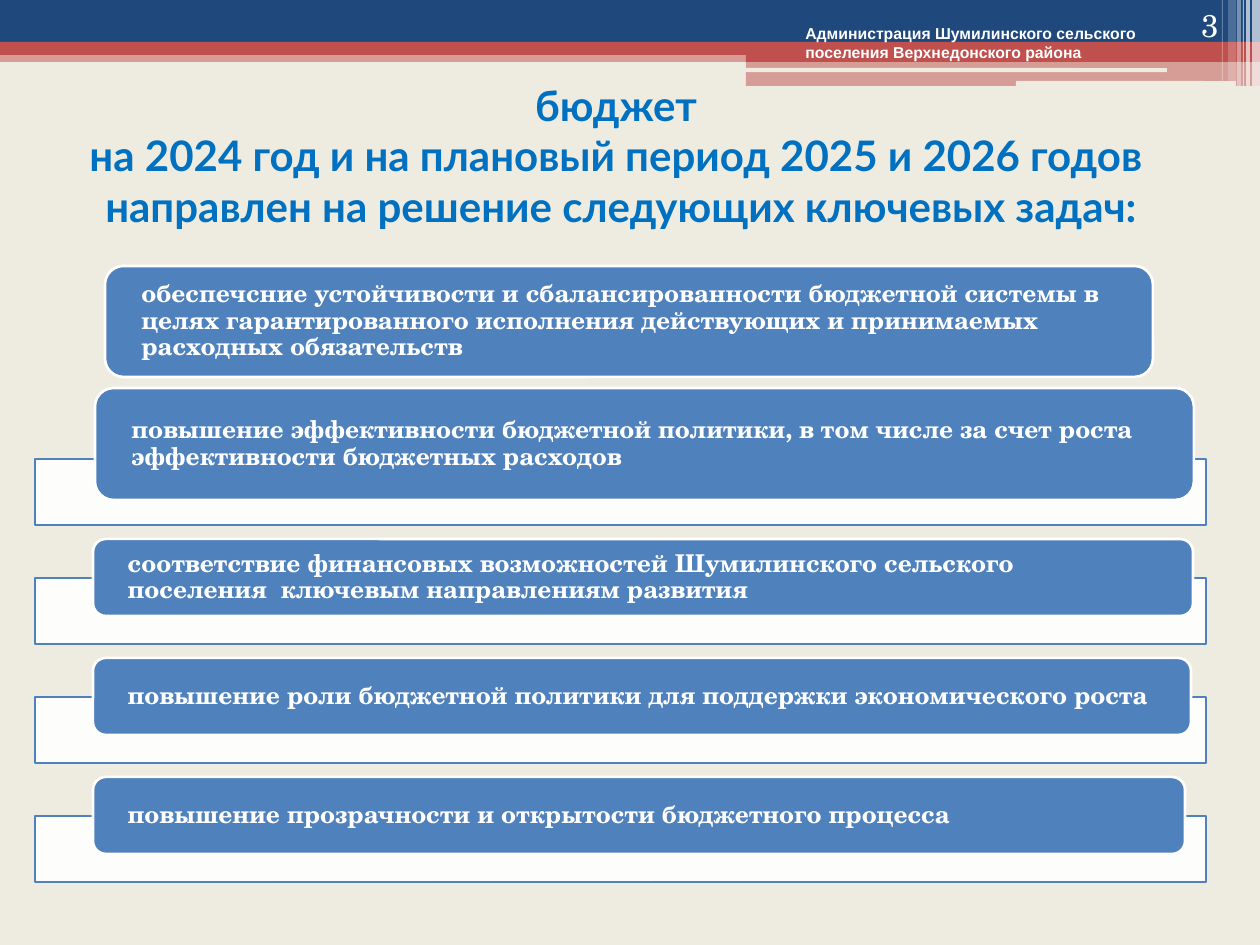
from lxml.etree import SubElement
from pptx import Presentation
from pptx.dml.color import RGBColor
from pptx.enum.shapes import MSO_SHAPE
from pptx.enum.text import MSO_ANCHOR, PP_ALIGN
from pptx.oxml.ns import qn
from pptx.util import Emu, Pt

CREAM = RGBColor(0xEE, 0xEC, 0xE1)
NAVY = RGBColor(0x1F, 0x49, 0x7D)
RED = RGBColor(0xC0, 0x50, 0x4D)
BLUE = RGBColor(0x4F, 0x81, 0xBD)
TITLE_BLUE = RGBColor(0x00, 0x70, 0xC0)
WHITE = RGBColor(0xFF, 0xFF, 0xFF)
SERIF = "TeX Gyre Schola"

ORGANIZATION = "Администрация Шумилинского сельского поселения Верхнедонского района"
PAGE_NUMBER = "3"
TITLE_LINES = [
    "бюджет ",
    "на 2024 год и на плановый период 2025 и 2026 годов ",
    "направлен на решение следующих ключевых задач:",
]

# Task text and card box: left, top, width, height
TASKS = [
    ("обеспечсние устойчивости и сбалансированности бюджетной системы в целях "
     "гарантированного исполнения действующих и принимаемых расходных обязательств",
     (105, 266, 1048, 111)),
    ("повышение эффективности бюджетной политики, в том числе за счет роста "
     "эффективности бюджетных расходов", (95, 388, 1099, 112)),
    ("cоответствие финансовых возможностей Шумилинского сельского поселения  "
     "ключевым направлениям развития", (93, 539, 1100, 77)),
    ("повышение роли бюджетной политики для поддержки экономического роста",
     (93, 658, 1098, 77)),
    ("повышение прозрачности и открытости бюджетного процесса",
     (93, 777, 1092, 77)),
]
PANEL_LEFT, PANEL_TOP, PANEL_WIDTH, PANEL_HEIGHT = 35, 459, 1171, 66
PANEL_PITCH = 119

# Header bands: box, colour, opacity in percent
BANDS = [
    ((0, 50, 1260, 12), RED, 50),
    ((0, 0, 1260, 43), NAVY, 100),
    ((0, 42, 1260, 13), RED, 100),
    ((746, 49, 514, 13), RED, 100),
    ((746, 61, 514, 25), RED, 50),
]
SLOTS = [(745, 68, 422, 4), (1016, 81, 220, 5)]
# Stripes at the right edge: left, width, height, opacity in percent
STRIPES = [
    (1252, 8, 86, 65), (1246, 4, 86, 65), (1243, 1, 86, 60),
    (1237, 4, 86, 40), (1228, 8, 81, 20), (1222, 1, 81, 30),
]


def px(value):
    return Emu(round(value * 914400 / 126))


def add_block(slide, kind, box, color, opacity=100, line_color=None):
    shape = slide.shapes.add_shape(kind, *map(px, box))
    shape.shadow.inherit = False
    shape.fill.solid()
    shape.fill.fore_color.rgb = color
    if opacity < 100:
        color_element = shape.fill._xPr.find(qn("a:solidFill"))[0]
        SubElement(color_element, qn("a:alpha"), val=str(opacity * 1000))
    if line_color is None:
        shape.line.fill.background()
    else:
        shape.line.color.rgb = line_color
        shape.line.width = Pt(1.5)
    return shape


def write_text(shape, lines, font_name, size, color, bold=True,
               align=PP_ALIGN.LEFT, anchor=MSO_ANCHOR.TOP):
    """Fill the shape with one paragraph, breaking between the given lines."""
    frame = shape.text_frame
    frame.word_wrap = True
    frame.vertical_anchor = anchor
    paragraph = frame.paragraphs[0]
    paragraph.alignment = align
    for index, line in enumerate(lines):
        if index:
            paragraph.add_line_break()
        run = paragraph.add_run()
        run.text = line
        run.font.name = font_name
        run.font.size = Pt(size)
        run.font.bold = bold
        run.font.color.rgb = color
    return paragraph


def add_text(slide, box, *args, **options):
    write_text(slide.shapes.add_textbox(*map(px, box)), *args, **options)


def add_header(slide):
    for box, color, opacity in BANDS:
        add_block(slide, MSO_SHAPE.RECTANGLE, box, color, opacity)
    for box in SLOTS:
        add_block(slide, MSO_SHAPE.ROUNDED_RECTANGLE, box, CREAM)
    for left, width, height, opacity in STRIPES:
        add_block(slide, MSO_SHAPE.RECTANGLE, (left, 0, width, height), WHITE, opacity)
    add_text(slide, (793, 18, 392, 50), [ORGANIZATION], "Arial", 9, WHITE)
    add_text(slide, (6, 89, 1230, 132), TITLE_LINES, "Lato", 24, TITLE_BLUE,
             align=PP_ALIGN.CENTER, anchor=MSO_ANCHOR.MIDDLE)
    add_text(slide, (1126, 0, 105, 50), [PAGE_NUMBER], SERIF, 18, WHITE, bold=False,
             align=PP_ALIGN.RIGHT, anchor=MSO_ANCHOR.BOTTOM)


def add_tasks(slide):
    for index, (text, box) in enumerate(TASKS):
        if index:
            top = PANEL_TOP + (index - 1) * PANEL_PITCH
            add_block(slide, MSO_SHAPE.RECTANGLE,
                      (PANEL_LEFT, top, PANEL_WIDTH, PANEL_HEIGHT), WHITE, 90, BLUE)
        card = add_block(slide, MSO_SHAPE.ROUNDED_RECTANGLE, box, BLUE, line_color=WHITE)
        frame = card.text_frame
        frame.margin_left = frame.margin_right = px(31)
        frame.margin_top = frame.margin_bottom = 0
        paragraph = write_text(card, [text], SERIF, 14, WHITE, anchor=MSO_ANCHOR.MIDDLE)
        paragraph.line_spacing = 0.9


def main():
    presentation = Presentation()
    presentation.slide_width = px(1260)
    presentation.slide_height = px(945)
    slide = presentation.slides.add_slide(presentation.slide_layouts[6])
    slide.background.fill.solid()
    slide.background.fill.fore_color.rgb = CREAM
    add_header(slide)
    add_tasks(slide)
    presentation.save("out.pptx")


if __name__ == "__main__":
    main()
